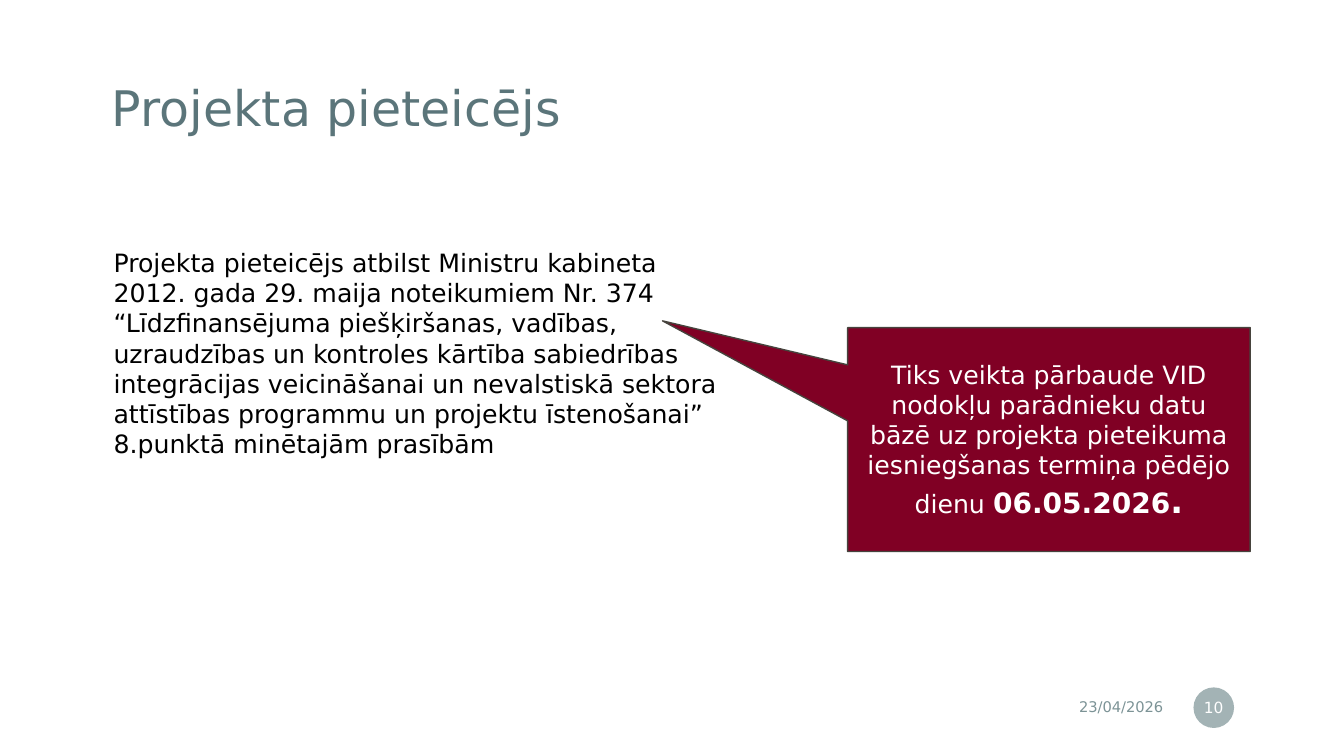
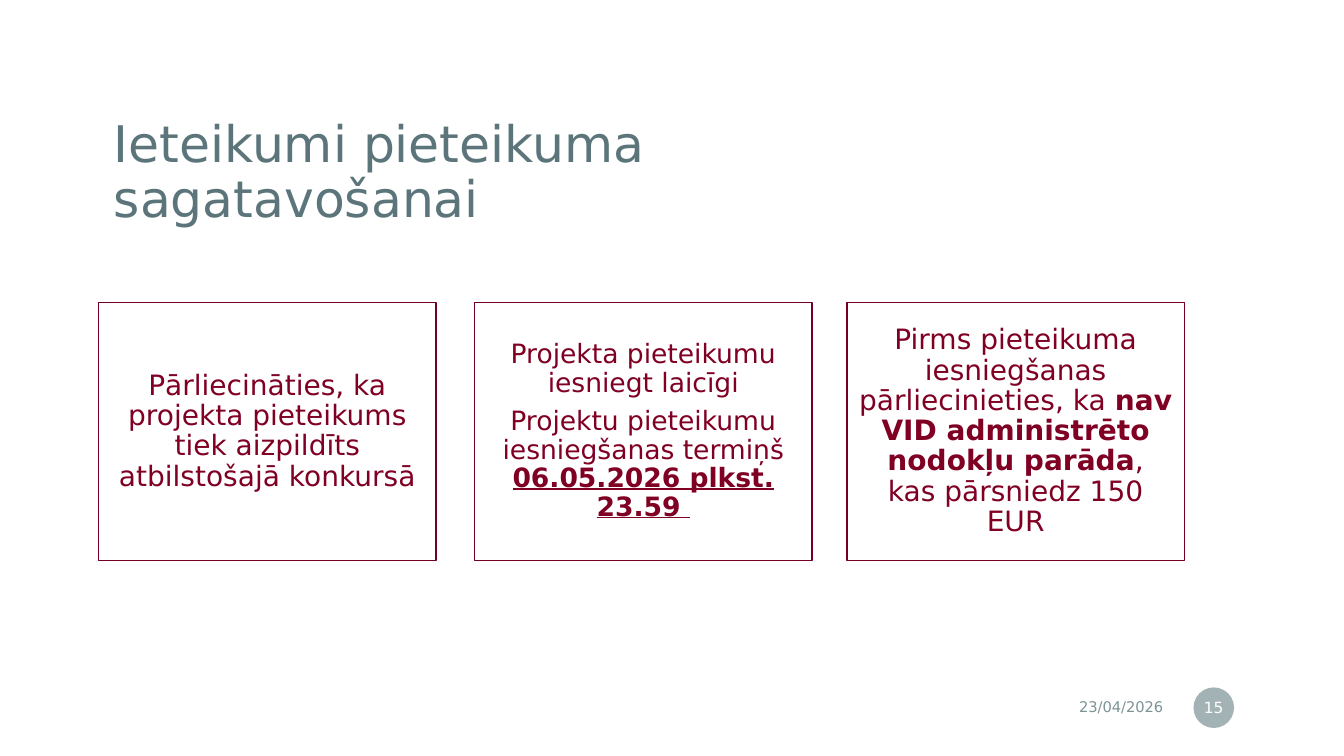
import pptx
import pptx.dml.color
import pptx.enum.shapes
import pptx.enum.text
import pptx.oxml.ns
import pptx.util
from lxml import etree

Pt = pptx.util.Pt
Kind = pptx.enum.shapes.MSO_SHAPE
Align = pptx.enum.text.PP_ALIGN
Anchor = pptx.enum.text.MSO_ANCHOR

THEME = {
    "font": "DejaVu Sans",
    "title": "5B757A", "muted": "7C9396", "ink": "000000", "paper": "FFFFFF",
    "wine": "800024", "edge": "740021", "frame": "46433D",
    "date": 10.5, "badge": 11, "body": 18, "card": 20, "tight": 19,
}
DATE = "23/04/2026"

RULES = (
    "Projekta pieteicējs atbilst Ministru kabineta 2012. gada 29. maija noteikumiem Nr. 374 "
    "“Līdzfinansējuma piešķiršanas, vadības, uzraudzības un kontroles kārtība sabiedrības "
    "integrācijas veicināšanai un nevalstiskā sektora attīstības programmu un projektu "
    "īstenošanai” 8.punktā minētajām prasībām"
)
CHECK = [[
    ("Tiks veikta pārbaude VID nodokļu parādnieku datu bāzē uz projekta pieteikuma "
     "iesniegšanas termiņa pēdējo dienu ", {}),
    ("06.05.2026", {"bold": True, "size": Pt(20)}),
    (".", {"bold": True, "size": Pt(24)}),
]]
CARDS = [
    (70.5, THEME["card"], [
        [("Pārliecināties, ka projekta pieteikums tiek aizpildīts atbilstošajā konkursā", {})],
    ]),
    (339, THEME["tight"], [
        [("Projekta pieteikumu iesniegt laicīgi", {})],
        [("Projektu pieteikumu iesniegšanas termiņš ", {}),
         ("06.05.2026 plkst. 23.59 ", {"bold": True, "underline": True})],
    ]),
    (605, THEME["card"], [
        [("Pirms pieteikuma iesniegšanas pārliecinieties, ka ", {}),
         ("nav VID administrēto nodokļu parāda", {"bold": True}),
         (",\nkas pārsniedz 150 EUR", {})],
    ]),
]


def tint(name):
    return pptx.dml.color.RGBColor.from_string(THEME[name])


def write(shape, text, size, color="ink", align=Align.LEFT, anchor=Anchor.MIDDLE,
          inset=(7.2, 3.6), line=1, gap=0):
    frame = shape.text_frame
    frame.word_wrap = True
    frame.vertical_anchor = anchor
    frame.margin_left = frame.margin_right = Pt(inset[0])
    frame.margin_top = frame.margin_bottom = Pt(inset[1])
    paras = [[(text, {})]] if isinstance(text, str) else text
    for index, runs in enumerate(paras):
        para = frame.add_paragraph() if index else frame.paragraphs[0]
        para.alignment = align
        para.line_spacing = line
        para.space_before = Pt(gap if index else 0)
        para.font.size = Pt(size)
        for words, style in runs:
            for row, part in enumerate(words.split("\n")):
                if row:
                    para.add_line_break()
                run = para.add_run()
                run.text = part
                font = run.font
                font.name = THEME["font"]
                font.size = Pt(size)
                font.color.rgb = tint(color)
                for key, value in style.items():
                    setattr(font, key, value)


def draw(slide, kind, box, fill, line=None):
    shape = slide.shapes.add_shape(kind, *map(Pt, box))
    shape.shadow.inherit = False
    shape.fill.solid()
    shape.fill.fore_color.rgb = tint(fill)
    if line:
        shape.line.color.rgb = tint(line)
        shape.line.width = Pt(1)
    else:
        shape.line.fill.background()
    return shape


def label(slide, box, text, size, **style):
    write(slide.shapes.add_textbox(*map(Pt, box)), text, size, **style)


def start(deck, title, box, size, number):
    slide = deck.slides.add_slide(deck.slide_layouts[6])
    label(slide, box, title, size, color="title", inset=(14.4, 14.4), line=0.9)
    label(slide, (621.5, 492.5, 216.5, 25), DATE, THEME["date"],
          color="muted", align=Align.RIGHT)
    badge = draw(slide, Kind.OVAL, (852.5, 491, 29, 29), "muted")
    shade = badge.fill._xPr.find(".//" + pptx.oxml.ns.qn("a:srgbClr"))
    etree.SubElement(shade, pptx.oxml.ns.qn("a:alpha"), val="70000")
    write(badge, str(number), THEME["badge"], color="paper", align=Align.CENTER,
          inset=(1.4, 3.6))
    return slide


def main():
    deck = pptx.Presentation()
    deck.slide_width, deck.slide_height = Pt(960), Pt(540)

    slide = start(deck, "Projekta pieteicējs", (65.5, 34.5, 733, 88.5), 35, 10)
    label(slide, (74, 173, 449.5, 160), RULES, THEME["body"], anchor=Anchor.TOP)
    note = draw(slide, Kind.RECTANGULAR_CALLOUT, (605.5, 234, 287.5, 160), "wine", "frame")
    note.adjustments[0], note.adjustments[1] = -0.96, -0.53
    write(note, CHECK, THEME["body"], color="paper", align=Align.CENTER)

    slide = start(deck, "Ieteikumi pieteikuma sagatavošanai", (67, 80, 628.5, 88.5), 36, 15)
    for left, size, text in CARDS:
        card = draw(slide, Kind.RECTANGLE, (left, 216, 241, 184.5), "paper", "edge")
        write(card, text, size, color="wine", align=Align.CENTER, inset=(5.8, 5.8),
              line=0.9, gap=0.35 * size)

    deck.save("out.pptx")


if __name__ == "__main__":
    main()
